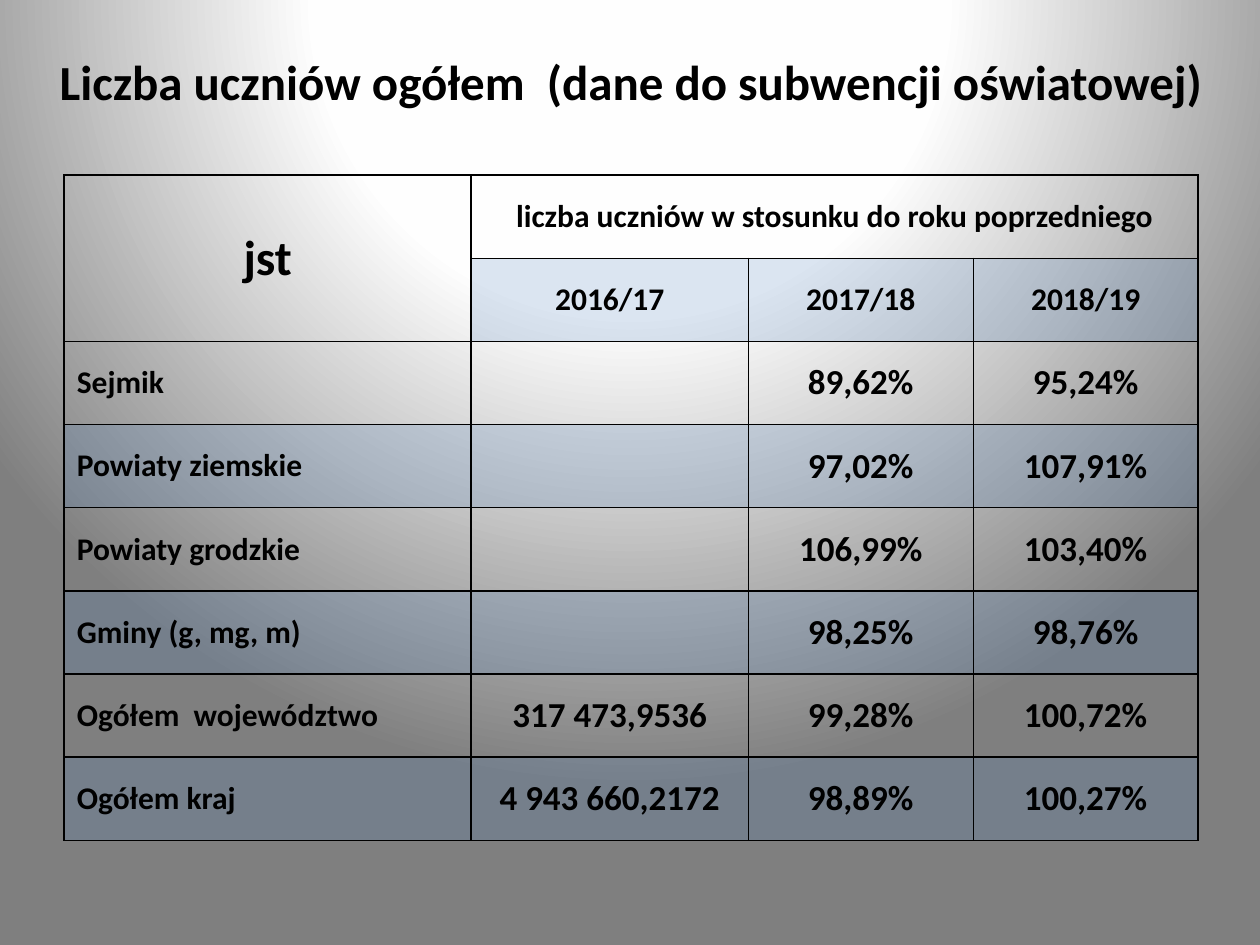
from dataclasses import dataclass

from pptx import Presentation
from pptx.dml.color import RGBColor
from pptx.enum.text import MSO_ANCHOR as Anchor, MSO_AUTO_SIZE as AutoSize, PP_ALIGN as Align
from pptx.oxml import parse_xml
from pptx.oxml.ns import nsdecls, qn
from pptx.util import Inches, Pt


@dataclass(frozen=True)
class Theme:
    font: str = "Calibri"
    ink: str = "000000"
    band: str = "4F81BD"
    band_opacity: int = 20
    backdrop: tuple = ((0, "FFFFFF"), (40, "FEFEFE"), (100, "7F7F7F"))
    heading: int = 28
    label: int = 18
    figure: int = 20
    rule: int = 1


THEME = Theme()
TITLE = "Liczba uczniów ogółem  (dane do subwencji oświatowej)"
CORNER = "jst"
GROUP = "liczba uczniów w stosunku do roku poprzedniego"
YEARS = ("2016/17", "2017/18", "2018/19")
UNITS = (
    ("Sejmik", "", "89,62%", "95,24%"),
    ("Powiaty ziemskie", "", "97,02%", "107,91%"),
    ("Powiaty grodzkie", "", "106,99%", "103,40%"),
    ("Gminy (g, mg, m)", "", "98,25%", "98,76%"),
    ("Ogółem  województwo", "317 473,9536", "99,28%", "100,72%"),
    ("Ogółem kraj", "4 943 660,2172", "98,89%", "100,27%"),
)
COLUMN_SHARES = (3.23, 2.2, 1.785, 1.785)


def apply_format(target, values):
    for attribute, value in values.items():
        setattr(target, attribute, value)


def write(frame, wording, size, align):
    apply_format(frame, {"text": wording, "vertical_anchor": Anchor.MIDDLE})
    paragraph = frame.paragraphs[0]
    paragraph.alignment = align
    for styled in (paragraph, *paragraph.runs):
        apply_format(styled.font, {"name": THEME.font, "size": Pt(size), "bold": True})
        styled.font.color.rgb = RGBColor.from_string(THEME.ink)


def paint_backdrop(slide):
    slide.background.fill.solid()
    plain = next(slide.element.iter(qn("a:solidFill")))
    stops = "".join(
        f'<a:gs pos="{position * 1000}"><a:srgbClr val="{color}"/></a:gs>'
        for position, color in THEME.backdrop
    )
    glow = parse_xml(
        f'<a:gradFill {nsdecls("a")} rotWithShape="1"><a:gsLst>{stops}</a:gsLst>'
        '<a:path path="circle"><a:fillToRect l="50000" t="-80000" r="50000" b="180000"/>'
        "</a:path></a:gradFill>"
    )
    plain.getparent().replace(plain, glow)


def place_title(slide, left, top, width, height):
    title = slide.shapes.title
    apply_format(title, {"left": left, "top": top, "width": width, "height": height})
    apply_format(title.text_frame, {"word_wrap": True, "auto_size": AutoSize.NONE})
    write(title.text_frame, TITLE, THEME.heading, Align.CENTER)


def decorate(cell, banded):
    if banded:
        cell.fill.solid()
        cell.fill.fore_color.rgb = RGBColor.from_string(THEME.band)
    else:
        cell.fill.background()
    properties = cell._tc.get_or_add_tcPr()
    for color in properties.iter(qn("a:srgbClr")):
        color.append(parse_xml(f'<a:alpha {nsdecls("a")} val="{THEME.band_opacity * 1000}"/>'))
    for index, side in enumerate("LRTB"):
        properties.insert(index, parse_xml(
            f'<a:ln{side} {nsdecls("a")} w="{Pt(THEME.rule)}"><a:solidFill>'
            f'<a:srgbClr val="{THEME.ink}"/></a:solidFill></a:ln{side}>'
        ))


def place_pupils(slide, left, top, width, height):
    rows = ((CORNER, GROUP, "", ""), ("", *YEARS), *UNITS)
    pupils = slide.shapes.add_table(
        len(rows), len(COLUMN_SHARES), left, top, width, height
    ).table
    for column, share in zip(pupils.columns, COLUMN_SHARES):
        column.width = int(width * share / sum(COLUMN_SHARES))
    for row in pupils.rows:
        row.height = height // len(rows)
    pupils.cell(0, 0).merge(pupils.cell(1, 0))
    pupils.cell(0, 1).merge(pupils.cell(0, 3))
    for r, entries in enumerate(rows):
        for c, entry in enumerate(entries):
            cell = pupils.cell(r, c)
            in_header = r < 2
            size = THEME.label if in_header or c == 0 else THEME.figure
            if entry == CORNER:
                size = THEME.heading
            align = Align.CENTER if in_header or c else Align.LEFT
            write(cell.text_frame, entry, size, align)
            cell.vertical_anchor = Anchor.MIDDLE
            decorate(cell, r % 2 == 1 and (r, c) != (1, 0))


def main():
    deck = Presentation()
    apply_format(deck, {"slide_width": Inches(10), "slide_height": Inches(7.5)})
    slide = deck.slides.add_slide(deck.slide_layouts.get_by_name("Title Only"))
    paint_backdrop(slide)
    place_title(slide, Inches(0.2), Inches(0.3), Inches(9.61), Inches(0.69))
    place_pupils(slide, Inches(0.51), Inches(1.39), Inches(9), Inches(5.28))
    deck.save("out.pptx")


if __name__ == "__main__":
    main()
